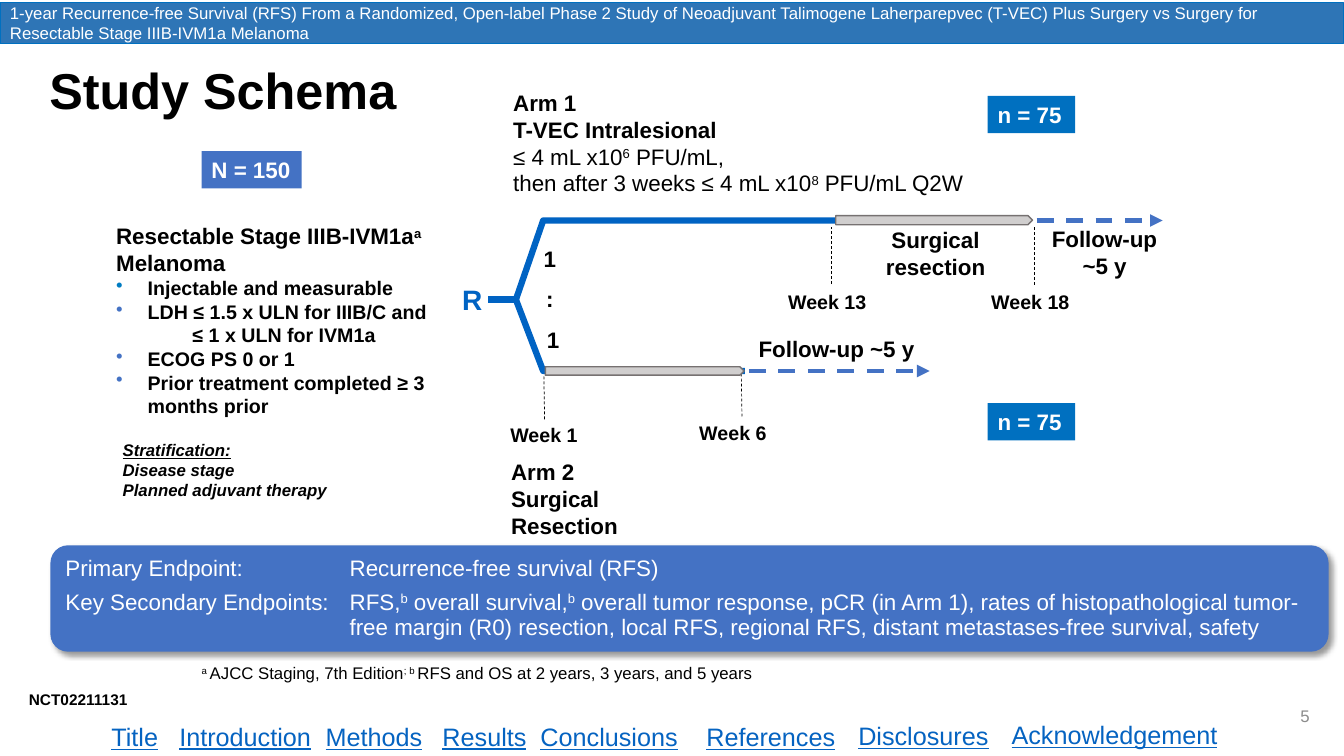
from lxml import etree
from pptx import Presentation
from pptx.dml.color import RGBColor
from pptx.enum.dml import MSO_LINE
from pptx.enum.shapes import MSO_CONNECTOR, MSO_SHAPE
from pptx.enum.text import MSO_ANCHOR, PP_ALIGN
from pptx.oxml.ns import qn
from pptx.util import Pt

LEFT, CENTER, RIGHT = PP_ALIGN.LEFT, PP_ALIGN.CENTER, PP_ALIGN.RIGHT
TOP, MIDDLE, BOTTOM = MSO_ANCHOR.TOP, MSO_ANCHOR.MIDDLE, MSO_ANCHOR.BOTTOM
RECT, ROUND, TAG = MSO_SHAPE.RECTANGLE, MSO_SHAPE.ROUNDED_RECTANGLE, MSO_SHAPE.PENTAGON
STRAIGHT, DASH = MSO_CONNECTOR.STRAIGHT, MSO_LINE.DASH
COLORS = {
    "black": "000000", "white": "FFFFFF", "blue": "4472C4", "arm": "0063C3",
    "badge": "0070C0", "banner": "2E75B6", "dot": "007CC2", "bar": "D0CECE",
    "edge": "767171", "link": "0563C1", "page": "8C8C8C",
}
PAD = (7.2, 3.6, 7.2, 3.6)
FLUSH = (0, 0, 0, 0)


class Board:
    """Hold the style and the current slide, and draw each kind of element."""

    def __init__(self, deck, font):
        self.font = font
        self.slide = deck.slides.add_slide(deck.slide_layouts[5])
        self.shapes = self.slide.shapes

    def color(self, name):
        return RGBColor.from_string(COLORS[name])

    def label(self, shape, lines, size=16, color="black", bold=True, align=LEFT,
              anchor=TOP, pad=PAD, wrap=True, space=None):
        frame = shape.text_frame
        frame.word_wrap, frame.vertical_anchor = wrap, anchor
        (frame.margin_left, frame.margin_top,
         frame.margin_right, frame.margin_bottom) = map(Pt, pad)
        frame.text = "\n".join([""] * len(lines))
        for para, line in zip(frame.paragraphs, lines):
            para.alignment = align
            if space:
                para.line_spacing = space
            for index, part in enumerate(line.split("^")):
                if part:
                    run = para.add_run()
                    run.text = part
                    if index % 2:
                        run.font._element.set("baseline", "30000")
            self.style(para, name=self.font, size=Pt(size), bold=bold)
            for run in para.runs:
                run.font.color.rgb = self.color(color)
        return frame.paragraphs

    def style(self, para, **traits):
        for run in para.runs:
            for key, value in traits.items():
                setattr(run.font, key, value)

    def indent(self, para, left, first=0, dot=None):
        props = para._p.get_or_add_pPr()
        props.set("marL", str(Pt(left)))
        props.set("indent", str(Pt(first)))
        if dot:
            tint = etree.SubElement(props, qn("a:buClr"))
            etree.SubElement(tint, qn("a:srgbClr"), val=COLORS[dot])
            etree.SubElement(props, qn("a:buChar"), char="•")

    def title(self, box, line, **look):
        shape = self.shapes.title
        shape.left, shape.top, shape.width, shape.height = map(Pt, box)
        self.label(shape, [line], **look)

    def text(self, box, lines, **look):
        return self.label(self.shapes.add_textbox(*map(Pt, box)), lines, **look)

    def block(self, kind, box, fill, edge=None, width=1):
        shape = self.shapes.add_shape(kind, *map(Pt, box))
        shape.shadow.inherit = False
        shape.fill.solid()
        shape.fill.fore_color.rgb = self.color(fill)
        if edge:
            shape.line.color.rgb = self.color(edge)
            shape.line.width = Pt(width)
        else:
            shape.line.fill.background()
        return shape

    def badge(self, box, count, fill):
        self.label(self.block(RECT, box, fill), [count], color="white", wrap=False)

    def shade(self, shape):
        effects = shape._element.spPr.find(qn("a:effectLst"))
        drop = etree.SubElement(effects, qn("a:outerShdw"), blurRad=str(Pt(4)),
                                dist=str(Pt(3)), dir="2700000", algn="tl", rotWithShape="0")
        tint = etree.SubElement(drop, qn("a:srgbClr"), val=COLORS["black"])
        etree.SubElement(tint, qn("a:alpha"), val="40000")

    def line(self, ends, color, width, dash=None, arrow=False):
        line = self.shapes.add_connector(STRAIGHT, *map(Pt, ends))
        line.line.color.rgb = self.color(color)
        line.line.width = Pt(width)
        if dash:
            line.line.dash_style = dash
        if arrow:
            stroke = line._element.spPr.find(qn("a:ln"))
            etree.SubElement(stroke, qn("a:tailEnd"), type="triangle")
        etree.SubElement(line._element.spPr, qn("a:effectLst"))

    def branch(self, points, color, width):
        points = [(Pt(x), Pt(y)) for x, y in points]
        maker = self.shapes.build_freeform(*points[0])
        maker.add_line_segments(points[1:], close=False)
        shape = maker.convert_to_shape()
        shape.shadow.inherit = False
        shape.fill.background()
        shape.line.color.rgb = self.color(color)
        shape.line.width = Pt(width)


def main():
    deck = Presentation()
    deck.slide_width, deck.slide_height = Pt(960), Pt(540)
    board = Board(deck, "Arial")
    board.title((28, 54, 858, 24.5), "Study Schema", size=36, anchor=MIDDLE, space=0.9)

    banner = board.block(RECT, (0, 2, 960, 29), "banner", "badge", 0.75)
    board.label(banner, [
        "1-year Recurrence-free Survival (RFS) From a Randomized, Open-label Phase 2 Study "
        "of Neoadjuvant Talimogene Laherparepvec (T-VEC) Plus Surgery vs Surgery for "
        "Resectable Stage IIIB-IVM1a Melanoma"],
        size=12, color="white", bold=False, anchor=MIDDLE)

    panel = board.block(ROUND, (36, 389.5, 913, 76), "blue")
    board.shade(panel)
    goals = board.label(panel, [
        "Primary Endpoint:\tRecurrence-free survival (RFS)",
        "Key Secondary Endpoints:\tRFS,^b^ overall survival,^b^ overall tumor response, "
        "pCR (in Arm 1), rates of histopathological tumor-free margin (R0) resection, "
        "local RFS, regional RFS, distant metastases-free survival, safety"],
        color="white", bold=False, anchor=MIDDLE, pad=(7.2, 0, 0, 0), space=0.95)
    for para in goals:
        para.space_before = Pt(6)
        board.indent(para, 203, -203)

    notes = board.text((144, 474.5, 654, 13.5), [
        "^a ^AJCC Staging, 7th Edition^; b ^RFS and OS at 2 years, 3 years, and 5 years"],
        size=12, bold=False, anchor=BOTTOM, pad=FLUSH, space=0.95)
    board.indent(notes[0], 5, -5)

    for box, count, fill in [((144, 108, 71.5, 26.6), "N = 150", "blue"),
                             ((705.5, 68.5, 62.5, 26.6), "n = 75", "badge"),
                             ((705.5, 288, 62.5, 26.6), "n = 75", "badge")]:
        board.badge(box, count, fill)

    needs = board.text((83, 159, 258, 128), [
        "Resectable Stage IIIB-IVM1a^a^", "Melanoma", "Injectable and measurable",
        "LDH ≤ 1.5 x ULN for IIIB/C and", "≤ 1 x ULN for IVM1a", "ECOG PS 0 or 1",
        "Prior treatment completed ≥ 3 months prior"], pad=FLUSH)
    for para, dot in zip(needs[2:], ["dot", "blue", None, "blue", "blue"]):
        board.style(para, size=Pt(14))
        if dot:
            board.indent(para, 22.5, -22.5, dot)
        else:
            board.indent(para, 54.5)

    strata = board.text((80.5, 310.5, 198, 51),
                        ["Stratification:", "Disease stage", "Planned adjuvant therapy"], size=12)
    for para in strata:
        board.style(para, italic=True)
    board.style(strata[0], underline=True)

    for week, left, top, align in [("Week 1", 364.5, 274.5, LEFT), ("Week 6", 499.5, 273, LEFT),
                                   ("Week 13", 563, 179.5, LEFT),
                                   ("Week 18", 700, 179.5, CENTER)]:
        board.text((left, top, 72, 72), [week], size=14, align=align,
                   anchor=MIDDLE, pad=FLUSH, wrap=False)
    for ends in [(594, 203, 594, 162.5), (738.5, 203.5, 738.5, 162.5),
                 (530, 297.5, 529.5, 266.5), (389, 299.5, 388.5, 268.5)]:
        board.line(ends, "black", 0.5, DASH)

    for level in (265, 157.5):
        board.branch([(368.5, 214), (388, level), (641.5, level)], "arm", 4.5)
    board.line((370, 214, 348.5, 214), "arm", 4.5)
    board.block(RECT, (533, 260, 125, 11.5), "white", "white")
    for box in [(597, 154, 140.5, 6.5), (389.5, 262, 142, 6)]:
        board.block(TAG, box, "bar", "edge")
    for ends in [(740.5, 157.5, 830.5, 157.5), (535, 265, 664, 265)]:
        board.line(ends, "blue", 3, DASH, True)

    board.text((605, 161.5, 126.5, 42), ["Surgical resection"], align=CENTER, pad=FLUSH)
    board.text((743, 157, 92, 46), ["Follow-up", "~5 y"], align=CENTER)
    board.text((531.5, 235.5, 132, 26.6), ["Follow-up ~5 y"], align=CENTER)
    board.text((367, 168.5, 56, 83.5), ["1 ", ": ", "1"], align=CENTER,
               anchor=BOTTOM, pad=FLUSH, space=1.5)
    board.text((330, 200, 18.5, 27.5), ["R"], size=20, color="arm",
               anchor=MIDDLE, pad=FLUSH, wrap=False)
    board.text((358, 324, 124, 65.5), ["Arm 2", "Surgical Resection"])
    dose = board.text((359.5, 60, 341, 104.5), [
        "Arm 1", "T-VEC Intralesional", "≤ 4 mL x10^6^ PFU/mL,",
        "then after 3 weeks ≤ 4 mL x10^8^ PFU/mL Q2W"], wrap=False)
    for para in dose[2:]:
        board.style(para, bold=False)

    board.text((13.5, 489.5, 893.5, 21), ["NCT02211131"], size=11)
    board.text((916.5, 499.5, 26, 24), ["5"], size=12, color="page", bold=False,
               align=RIGHT, anchor=MIDDLE)

    for name, left, top, width in [
            ("Title", 72.5, 512, 48), ("Introduction", 121, 511.5, 109.5),
            ("Methods", 225.5, 512, 84), ("Results", 309, 511.5, 75),
            ("Conclusions", 379, 512, 114), ("References", 497.5, 512, 107.5),
            ("Disclosures", 606, 511, 109), ("Acknowledgement", 715.5, 510.5, 163)]:
        link = board.text((left, top, width, 29), [name], size=18, color="link",
                          bold=False, wrap=False)
        board.style(link[0], underline=True)

    deck.save("out.pptx")


if __name__ == "__main__":
    main()
